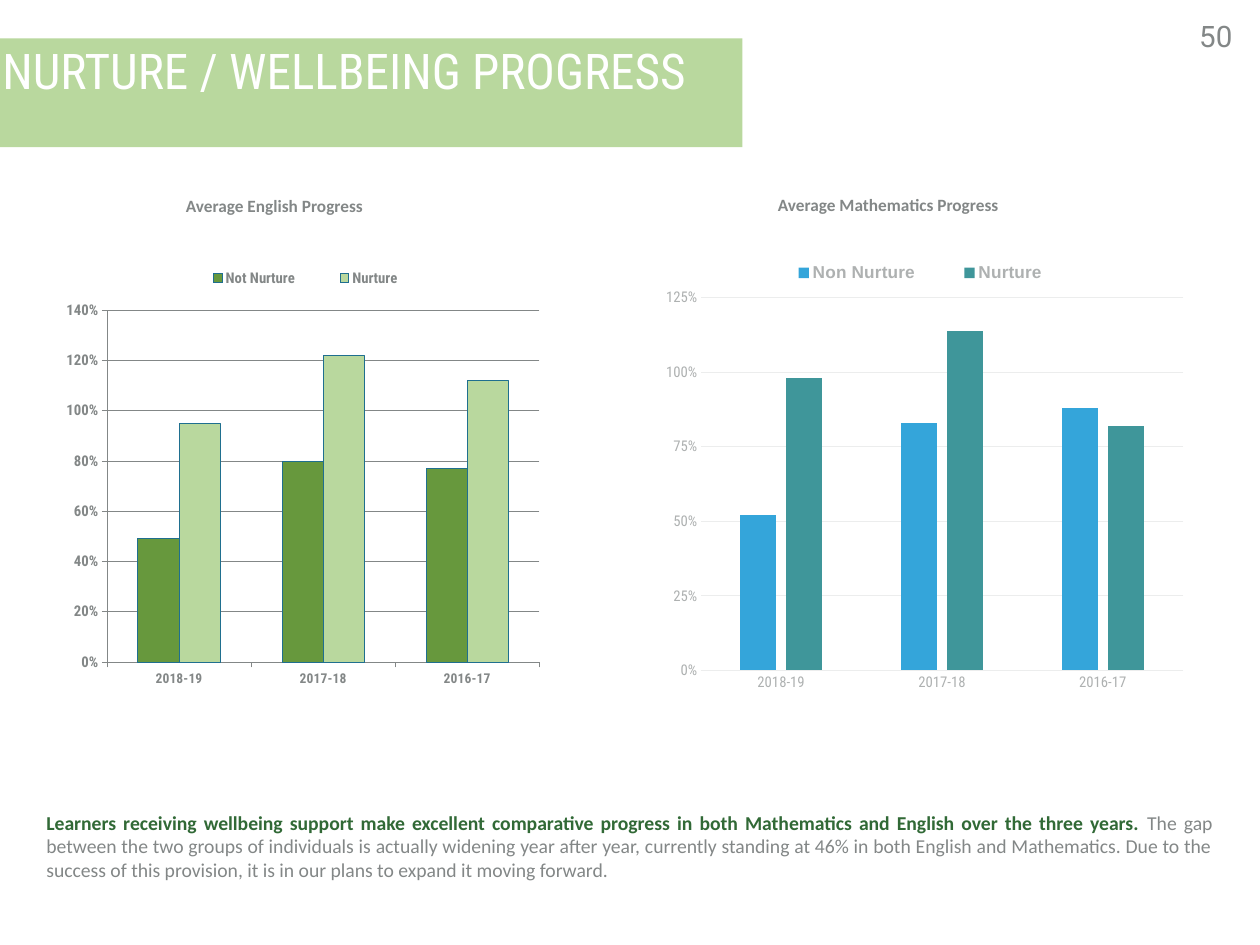
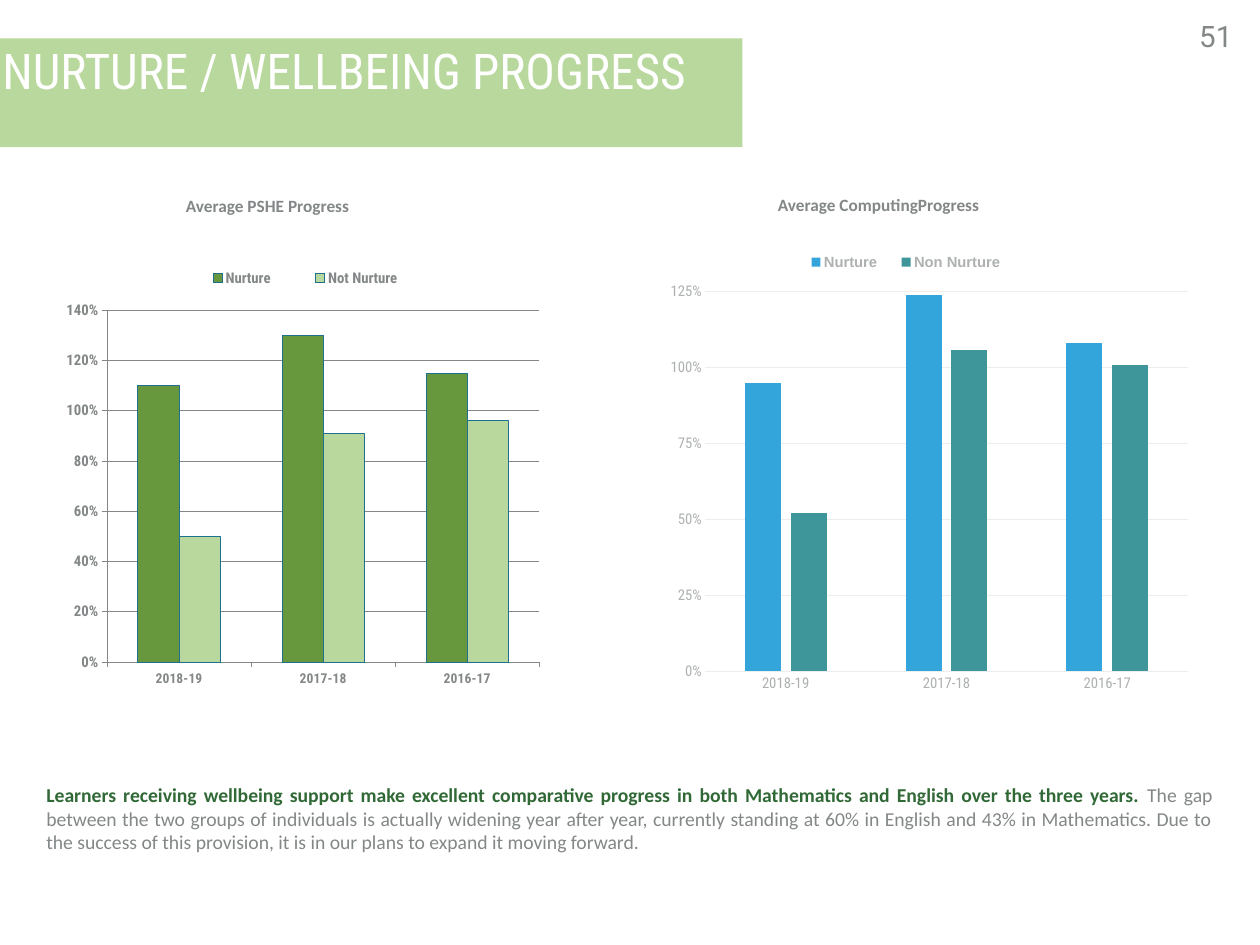
"""Build two slides comparing the progress of nurture and other learners."""
from dataclasses import dataclass

import lxml.etree
import pptx
import pptx.chart.data
import pptx.dml.color
import pptx.enum.chart
import pptx.enum.shapes
import pptx.enum.text
import pptx.oxml.ns
import pptx.util

Cm = pptx.util.Cm
Pt = pptx.util.Pt
RGBColor = pptx.dml.color.RGBColor
Align = pptx.enum.text.PP_ALIGN
Anchor = pptx.enum.text.MSO_ANCHOR
LegendPosition = pptx.enum.chart.XL_LEGEND_POSITION
TickMark = pptx.enum.chart.XL_TICK_MARK

WHITE = RGBColor(0xFF, 0xFF, 0xFF)
GREY = RGBColor(0x83, 0x87, 0x87)
LIGHT_GREY = RGBColor(0xAE, 0xB1, 0xB1)
PALE_GREY = RGBColor(0xEC, 0xED, 0xED)
DARK_GREEN = RGBColor(0x31, 0x69, 0x36)
GREEN = RGBColor(0x67, 0x98, 0x3D)
LIGHT_GREEN = RGBColor(0xB9, 0xD8, 0x9E)
BLUE = RGBColor(0x34, 0xA5, 0xDA)
TEAL = RGBColor(0x3F, 0x96, 0x9A)
BAR_OUTLINE = RGBColor(0x1F, 0x6F, 0x8F)

TITLE = "NURTURE / WELLBEING PROGRESS"
TITLE_FONT = "Roboto Condensed"
BODY_FONT = "Calibri"
INSET = Cm(0.15)
YEARS = ["2018-19", "2017-18", "2016-17"]
LEAD = ("Learners receiving wellbeing support make excellent comparative progress "
        "in both Mathematics and English over the three years.")
DETAIL = (" The gap between the two groups of individuals is actually widening year "
          "after year, currently standing at {gap}. Due to the success of this "
          "provision, it is in our plans to expand it moving forward.")


@dataclass
class ChartStyle:
    """Look of one family of column charts."""
    fills: tuple
    outline: RGBColor
    text: RGBColor
    lines: RGBColor
    bold: bool
    category_size: int
    legend_font: str
    legend_position: LegendPosition
    tick: TickMark
    top: float
    step: float
    gap: int
    overlap: int


GREEN_CHART = ChartStyle(
    (GREEN, LIGHT_GREEN), BAR_OUTLINE, GREY, GREY, True, 11, TITLE_FONT,
    LegendPosition.RIGHT, TickMark.OUTSIDE, 1.4, 0.2, 150, 0)
BLUE_CHART = ChartStyle(
    (BLUE, TEAL), None, LIGHT_GREY, PALE_GREY, False, 12, "Arial",
    LegendPosition.TOP, TickMark.NONE, 1.25, 0.25, 219, -27)
GREEN_PLOT = (0.12, 0.14, 0.85, 0.77)
GREEN_LEGEND = (0.25, 0.04, 0.52, 0.06)


def set_font(font, name, size, color, bold=False):
    """Set the face, size, colour and weight of a font."""
    font.name = name
    font.size = Pt(size)
    font.bold = bold
    font.color.rgb = color


def set_frame(frame, anchor):
    """Give a text frame the shared insets and wrapping."""
    frame.word_wrap = True
    frame.vertical_anchor = anchor
    frame.margin_left = frame.margin_right = INSET
    frame.margin_top = frame.margin_bottom = INSET


def add_label(page, text, place, name, size, anchor, bold=False, align=Align.LEFT):
    """Add a grey one-line text box and return its paragraph."""
    box = page.shapes.add_textbox(*map(Cm, place))
    set_frame(box.text_frame, anchor)
    para = box.text_frame.paragraphs[0]
    para.text = text
    para.alignment = align
    set_font(para.runs[0].font, name, size, GREY, bold)
    return para


def add_header(page, number):
    """Add the title band and the page number."""
    band = page.shapes.add_shape(
        pptx.enum.shapes.MSO_SHAPE.RECTANGLE, Cm(-0.08), Cm(1.1), Cm(21.36), Cm(3.12))
    band.shadow.inherit = False
    band.fill.solid()
    band.fill.fore_color.rgb = LIGHT_GREEN
    band.line.fill.background()
    set_frame(band.text_frame, Anchor.TOP)
    band.text_frame.margin_top = Cm(0.38)
    para = band.text_frame.paragraphs[0]
    para.text = TITLE
    para.alignment = Align.LEFT
    para.line_spacing = 0.8
    set_font(para.runs[0].font, TITLE_FONT, 40, WHITE)
    number_para = add_label(page, str(number), (33.48, 0.56, 2, 1.27), "Roboto", 24,
                            Anchor.TOP, align=Align.RIGHT)
    number_para.line_spacing = 0.8


def add_summary(page, top, gap):
    """Add the justified closing paragraph with its bold lead."""
    box = page.shapes.add_textbox(Cm(1.18), Cm(top), Cm(33.73), Cm(2.34))
    set_frame(box.text_frame, Anchor.MIDDLE)
    para = box.text_frame.paragraphs[0]
    para.alignment = Align.JUSTIFY
    for text, color, bold in ((LEAD, DARK_GREEN, True),
                              (DETAIL.format(gap=gap), GREY, False)):
        span = para.add_run()
        span.text = text
        set_font(span.font, BODY_FONT, 16, color, bold)


def set_layout(parent, index, place, inner=False):
    """Fix the place of a chart part as fractions of the chart."""
    qn = pptx.oxml.ns.qn
    for old in parent.findall(qn("c:layout")):
        parent.remove(old)
    layout = lxml.etree.Element(qn("c:layout"))
    manual = lxml.etree.SubElement(layout, qn("c:manualLayout"))
    values = [("layoutTarget", "inner")] if inner else []
    values += [("xMode", "edge"), ("yMode", "edge"), *zip("xywh", place)]
    for tag, value in values:
        lxml.etree.SubElement(manual, qn(f"c:{tag}")).set("val", str(value))
    parent.insert(index, layout)


def style_axes(chart, style):
    """Format both axes and the gridlines."""
    category, value = chart.category_axis, chart.value_axis
    for axis, size in ((category, style.category_size), (value, 12)):
        axis.major_tick_mark = style.tick
        axis.minor_tick_mark = TickMark.NONE
        set_font(axis.tick_labels.font, TITLE_FONT, size, style.text, style.bold)
        axis.format.line.color.rgb = style.lines
        axis.format.line.width = Pt(0.75)
    if style.tick == TickMark.NONE:
        value.format.line.fill.background()
    value.minimum_scale = 0
    value.maximum_scale = style.top
    value.major_unit = style.step
    value.tick_labels.number_format = "0%"
    value.tick_labels.number_format_is_linked = False
    value.has_major_gridlines = True
    value.major_gridlines.format.line.color.rgb = style.lines
    value.major_gridlines.format.line.width = Pt(0.75)


def add_columns(page, style, place, series, plot_place, legend_place, legend_size=12):
    """Add a clustered column chart of the yearly averages."""
    data = pptx.chart.data.CategoryChartData(number_format="0%")
    data.categories = YEARS
    for name, values in series.items():
        data.add_series(name, values)
    chart = page.shapes.add_chart(
        pptx.enum.chart.XL_CHART_TYPE.COLUMN_CLUSTERED, *map(Cm, place), data).chart
    chart.has_title = False
    set_font(chart.font, TITLE_FONT, 12, style.text, style.bold)
    style_axes(chart, style)
    chart.has_legend = True
    chart.legend.position = style.legend_position
    chart.legend.include_in_layout = False
    set_font(chart.legend.font, style.legend_font, legend_size, style.text, True)
    plot = chart.plots[0]
    plot.vary_by_categories = False
    plot.gap_width = style.gap
    plot.overlap = style.overlap
    for column, color in zip(plot.series, style.fills):
        column.format.fill.solid()
        column.format.fill.fore_color.rgb = color
        if style.outline is None:
            column.format.line.fill.background()
        else:
            column.format.line.color.rgb = style.outline
            column.format.line.width = Pt(0.75)
    set_layout(chart.element.xpath("c:chart/c:plotArea")[0], 0, plot_place, inner=True)
    set_layout(chart.element.xpath("c:chart/c:legend")[0], 1, legend_place)


def add_page(deck, number, subjects, green_series):
    """Add a slide with its header, chart headings and green chart."""
    page = deck.slides.add_slide(deck.slide_layouts[6])
    add_header(page, number)
    for subject, left, top in zip(subjects, (5.18, 22.15), (5.46, 5.41)):
        add_label(page, f"Average {subject}Progress", (left, top, 8, 0.89),
                  BODY_FONT, 14, Anchor.MIDDLE, bold=True)
    add_columns(page, GREEN_CHART, (1.32, 7.06, 14.58, 13.11), green_series,
                GREEN_PLOT, GREEN_LEGEND)
    return page


def main():
    """Build and save the deck."""
    deck = pptx.Presentation()
    deck.slide_width, deck.slide_height = Cm(36.12), Cm(27.1)

    page = add_page(deck, 50, ("English ", "Mathematics "),
                    {"Not Nurture": (0.49, 0.8, 0.77), "Nurture": (0.95, 1.22, 1.12)})
    add_columns(page, BLUE_CHART, (18.69, 7.11, 15.54, 13.03),
                {"Non Nurture": (0.52, 0.83, 0.88), "Nurture": (0.98, 1.14, 0.82)},
                (0.09, 0.11, 0.89, 0.82), (0.19, 0.02, 0.61, 0.07), legend_size=14)
    add_summary(page, 23.09, "46% in both English and Mathematics")

    page = add_page(deck, 51, ("PSHE ", "Computing"),
                    {"Nurture": (1.1, 1.3, 1.15), "Not Nurture": (0.5, 0.91, 0.96)})
    add_columns(page, BLUE_CHART, (18.82, 7.06, 15.54, 13.11),
                {"Nurture": (0.95, 1.24, 1.08), "Non Nurture": (0.52, 1.06, 1.01)},
                (0.09, 0.1, 0.89, 0.83), (0.25, 0, 0.42, 0.07))
    add_summary(page, 22.3, "60% in English and 43% in Mathematics")

    deck.save("out.pptx")


if __name__ == "__main__":
    main()
